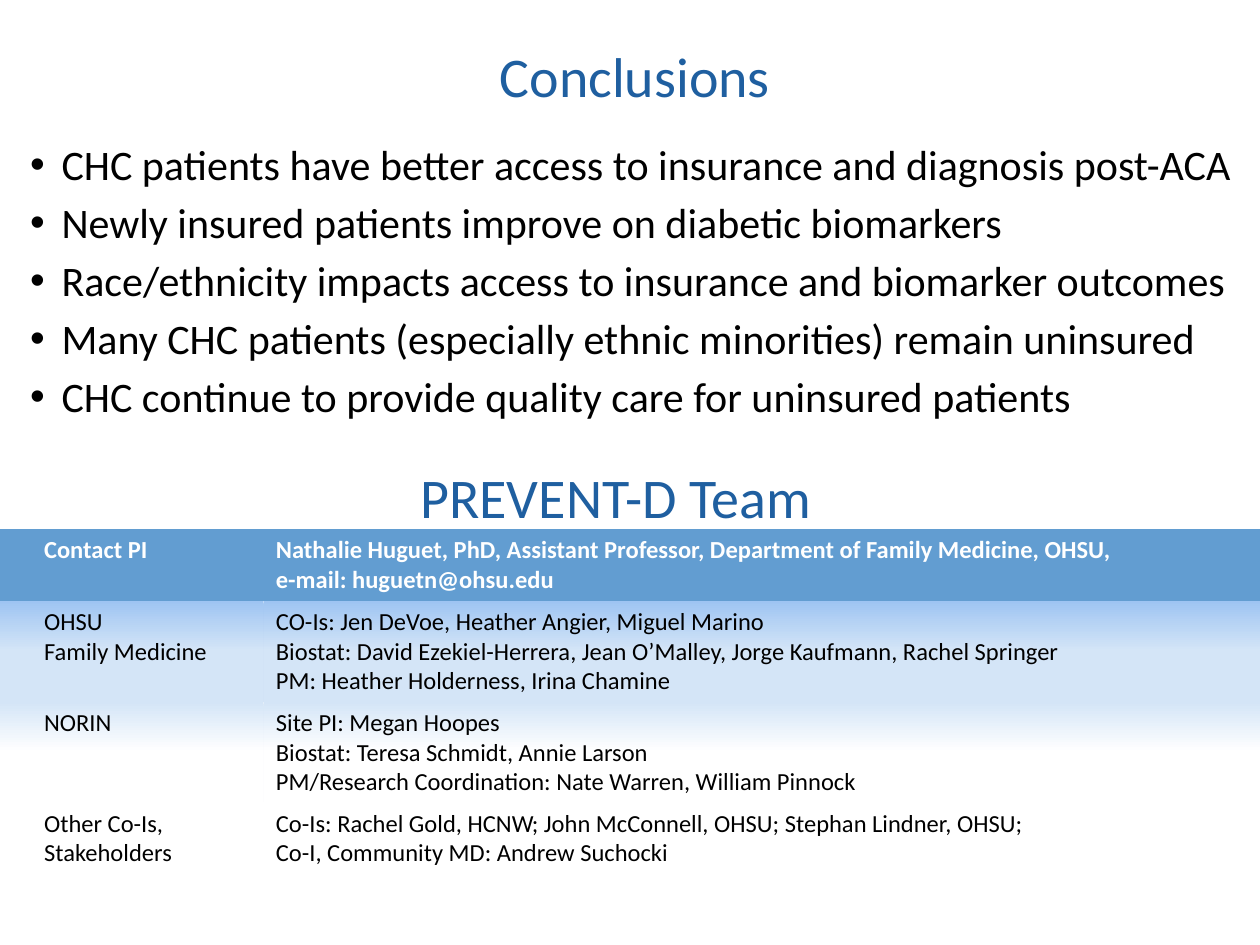
"""Build the conclusions and team slide."""
from dataclasses import dataclass

from lxml import etree
from pptx import Presentation
from pptx.dml.color import RGBColor
from pptx.enum.text import MSO_ANCHOR, PP_ALIGN
from pptx.oxml.ns import qn
from pptx.util import Inches, Pt

CENTER = PP_ALIGN.CENTER
LEFT = PP_ALIGN.LEFT
MIDDLE = MSO_ANCHOR.MIDDLE
TOP = MSO_ANCHOR.TOP
FONT = "Calibri"
TITLE_ONLY = 5
WIDTH, HEIGHT = Inches(10), Inches(7.5)
COLORS = {
    "title": "1F5FA0",
    "text": "000000",
    "header": "629DD1",
    "deep": "9EC4F2",
    "pale": "D4E5F7",
    "white": "FFFFFF",
}


@dataclass(frozen=True)
class Area:
    """Left, top, width and height as percentages of the slide."""
    left: float
    top: float
    width: float
    height: float

    def box(self) -> tuple[int, int, int, int]:
        return (int(WIDTH * self.left / 100), int(HEIGHT * self.top / 100),
                int(WIDTH * self.width / 100), int(HEIGHT * self.height / 100))


@dataclass(frozen=True)
class TeamRow:
    """A table row: height share, group, members and fill colours."""
    height: float
    group: str
    members: str
    fills: tuple[str, ...]
    text_color: str = "text"
    bold: bool = False


TITLE_AREA = Area(5.4, 2.4, 90, 11.07)
BODY_AREA = Area(1.4, 14, 100, 38.4)
TEAM_TITLE_AREA = Area(16, 49.07, 68, 6.8)
TABLE_AREA = Area(0, 56, 100, 33.6)
COLUMN_SHARES = (20.9, 79.1)
CONCLUSIONS = (
    "CHC patients have better access to insurance and diagnosis post-ACA",
    "Newly insured patients improve on diabetic biomarkers",
    "Race/ethnicity impacts access to insurance and biomarker outcomes",
    "Many CHC patients (especially ethnic minorities) remain uninsured",
    "CHC continue to provide quality care for uninsured patients",
)
TEAM = (
    TeamRow(6.67, "Contact PI",
            "Nathalie Huguet, PhD, Assistant Professor, Department of Family Medicine, OHSU,\n"
            "e-mail: huguetn@ohsu.edu", ("header",), "white", True),
    TeamRow(9.07, "OHSU\nFamily Medicine",
            "CO-Is: Jen DeVoe, Heather Angier, Miguel Marino\n"
            "Biostat: David Ezekiel-Herrera, Jean O’Malley, Jorge Kaufmann, Rachel Springer\n"
            "PM: Heather Holderness, Irina Chamine", ("deep", "pale")),
    TeamRow(8.67, "NORIN",
            "Site PI: Megan Hoopes\nBiostat: Teresa Schmidt, Annie Larson\n"
            "PM/Research Coordination: Nate Warren, William Pinnock", ("pale", "white")),
    TeamRow(9.2, "Other Co-Is, Stakeholders",
            "Co-Is: Rachel Gold, HCNW; John McConnell, OHSU; Stephan Lindner, OHSU;\n"
            "Co-I, Community MD: Andrew Suchocki", ("white",)),
)


def rgb(name: str) -> RGBColor:
    """Look up a named colour."""
    return RGBColor.from_string(COLORS[name])


def write(frame, text: str, size: int, color: str, align=LEFT, bold: bool = False) -> None:
    """Set the text of a frame and format all its runs."""
    frame.text = text
    for paragraph in frame.paragraphs:
        paragraph.alignment = align
        for run in paragraph.runs:
            run.font.name, run.font.size, run.font.bold = FONT, Pt(size), bold
            run.font.color.rgb = rgb(color)


def place(shape, area: Area, anchor) -> None:
    """Position a text shape and set its wrapping and anchor."""
    shape.left, shape.top, shape.width, shape.height = area.box()
    shape.text_frame.word_wrap = True
    shape.text_frame.vertical_anchor = anchor


def add_text(slide, area: Area, anchor):
    """Add a wrapping text box and return its frame."""
    shape = slide.shapes.add_textbox(*area.box())
    place(shape, area, anchor)
    return shape.text_frame


def add_bullets(frame, gap: float) -> None:
    """Give each paragraph a hanging bullet, with a gap between paragraphs."""
    for index, paragraph in enumerate(frame.paragraphs):
        properties = paragraph._p.get_or_add_pPr()
        properties.set("marL", str(Inches(0.25)))
        properties.set("indent", str(-Inches(0.25)))
        etree.SubElement(properties, qn("a:buFont")).set("typeface", "Arial")
        etree.SubElement(properties, qn("a:buChar")).set("char", "•")
        paragraph.space_before = Pt(gap if index else 0)


def fill_cell(cell, names: tuple[str, ...]) -> None:
    """Fill a cell plainly or with a downward gradient, without borders."""
    if len(names) == 1:
        cell.fill.solid()
        cell.fill.fore_color.rgb = rgb(names[0])
    else:
        cell.fill.gradient()
        cell.fill.gradient_angle = 270
        for stop, name, position in zip(cell.fill.gradient_stops, names, (0, 0.5)):
            stop.color.rgb, stop.position = rgb(name), position
    properties = cell._tc.get_or_add_tcPr()
    for index, side in enumerate(("a:lnL", "a:lnR", "a:lnT", "a:lnB")):
        line = etree.Element(qn(side))
        etree.SubElement(line, qn("a:noFill"))
        properties.insert(index, line)


def add_team_table(slide) -> None:
    """Add the table of team groups and members."""
    table = slide.shapes.add_table(len(TEAM), len(COLUMN_SHARES), *TABLE_AREA.box()).table
    table.first_row = table.horz_banding = False
    for column, share in zip(table.columns, COLUMN_SHARES):
        column.width = int(WIDTH * share / 100)
    for row, entry in zip(table.rows, TEAM):
        row.height = int(HEIGHT * entry.height / 100)
        for cell, text in zip(row.cells, (entry.group, entry.members)):
            write(cell.text_frame, text, 14, entry.text_color, bold=entry.bold)
            fill_cell(cell, entry.fills)
        row.cells[0].margin_left = Inches(0.35)


def main() -> None:
    """Build and save the slide."""
    presentation = Presentation()
    presentation.slide_width, presentation.slide_height = WIDTH, HEIGHT
    slide = presentation.slides.add_slide(presentation.slide_layouts[TITLE_ONLY])
    title = slide.shapes.title
    place(title, TITLE_AREA, MIDDLE)
    write(title.text_frame, "Conclusions", 32, "title", CENTER)
    body = add_text(slide, BODY_AREA, TOP)
    write(body, "\n".join(CONCLUSIONS), 24, "text")
    add_bullets(body, 4.4)
    team_title = add_text(slide, TEAM_TITLE_AREA, MIDDLE)
    team_title.margin_right = Inches(0.32)
    write(team_title, "PREVENT-D Team", 32, "title", CENTER)
    add_team_table(slide)
    presentation.save("out.pptx")


if __name__ == "__main__":
    main()
